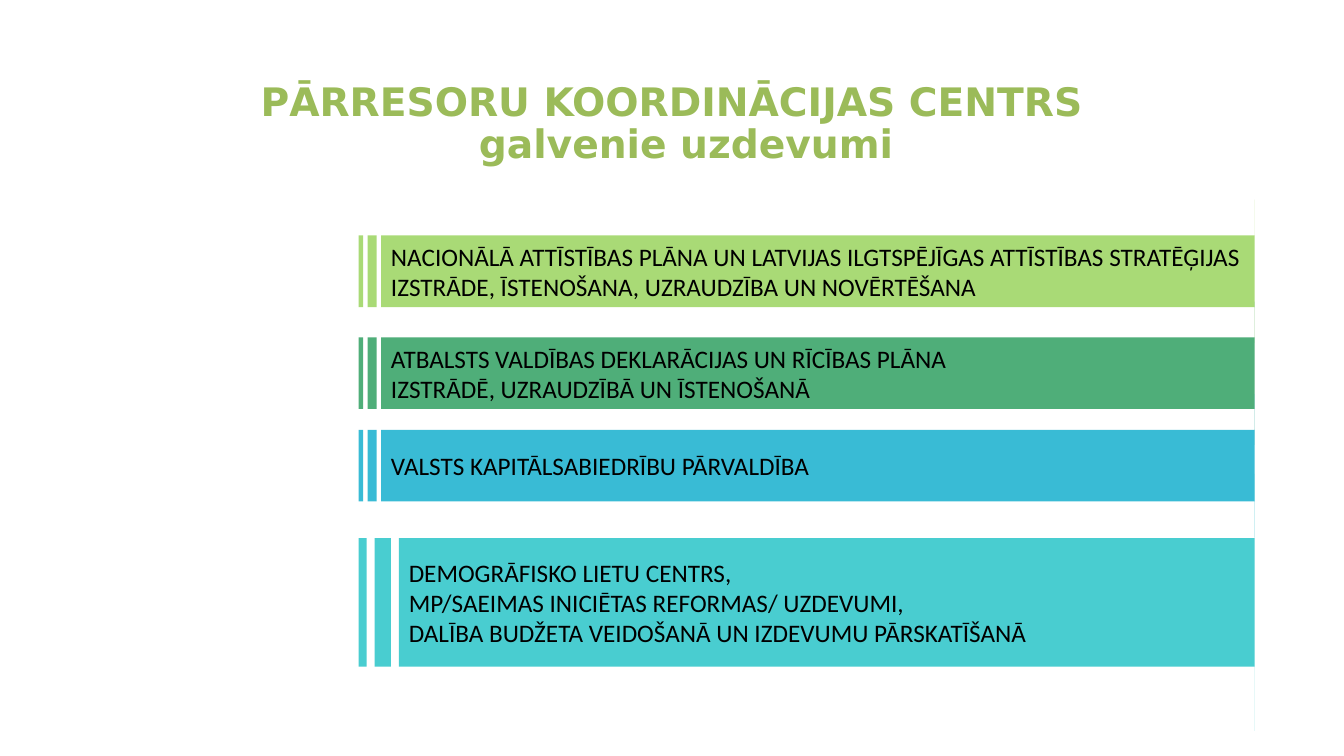
from dataclasses import dataclass

from lxml.etree import SubElement
from pptx import Presentation
from pptx.dml.color import RGBColor
from pptx.enum.shapes import MSO_SHAPE
from pptx.enum.text import MSO_ANCHOR, PP_ALIGN
from pptx.oxml.ns import qn
from pptx.util import Cm, Pt


@dataclass(frozen=True)
class Theme:
    title_font: str = "DejaVu Sans"
    body_font: str = "Calibri"
    title_size: int = 28
    body_size: int = 18
    title: str = "9BBB59"
    text: str = "000000"
    lime: str = "92D050"
    green: str = "008A3E"
    blue: str = "02A9CA"
    teal: str = "16C0C4"


class TaskSlide:
    def __init__(self, deck, theme):
        self.theme = theme
        self.page = deck.slides.add_slide(deck.slide_layouts[6])

    def add_span(self, para, text, font, size, color, bold=False):
        span = para.add_run()
        span.text = text
        span.font.name = font
        span.font.size = Pt(size)
        span.font.bold = bold
        span.font.color.rgb = RGBColor.from_string(color)

    def add_title(self, lines):
        """Add the heading; each line is a text with its left indent in cm."""
        theme = self.theme
        box = self.page.shapes.add_textbox(Cm(6.32), Cm(1.96), Cm(26), Cm(2.97))
        frame = box.text_frame
        frame.word_wrap = True
        for number, (text, indent) in enumerate(lines):
            para = frame.add_paragraph() if number else frame.paragraphs[0]
            para._p.get_or_add_pPr().set("marL", str(Cm(indent)))
            para.line_spacing = 0.9
            self.add_span(para, text, theme.title_font, theme.title_size,
                          theme.title, bold=True)

    def add_task(self, top, height, color, opacity, lines):
        """Add a striped bar; opacity is a percentage."""
        theme = self.theme
        arrow = self.page.shapes.add_shape(
            MSO_SHAPE.STRIPED_RIGHT_ARROW, Cm(9.04), Cm(top), Cm(22.58), Cm(height))
        arrow.adjustments[0] = 0.5
        arrow.adjustments[1] = 0
        arrow.shadow.inherit = False
        arrow.line.fill.background()
        arrow.fill.solid()
        arrow.fill.fore_color.rgb = RGBColor.from_string(color)
        shade = arrow._element.spPr.find(qn("a:solidFill"))[0]
        SubElement(shade, qn("a:alpha")).set("val", str(opacity * 1000))

        frame = arrow.text_frame
        frame.word_wrap = True
        frame.vertical_anchor = MSO_ANCHOR.MIDDLE
        for number, text in enumerate(lines):
            para = frame.add_paragraph() if number else frame.paragraphs[0]
            para.alignment = PP_ALIGN.LEFT
            self.add_span(para, text, theme.body_font, theme.body_size, theme.text)


def main():
    deck = Presentation()
    deck.slide_width, deck.slide_height = Cm(33.87), Cm(19.05)
    theme = Theme()
    slide = TaskSlide(deck, theme)

    slide.add_title([("PĀRRESORU KOORDINĀCIJAS CENTRS", 0),
                     ("galvenie uzdevumi", 5.5)])

    tasks = [
        (5.03, 3.61, theme.lime, 78,
         ["NACIONĀLĀ ATTĪSTĪBAS PLĀNA UN LATVIJAS ILGTSPĒJĪGAS ATTĪSTĪBAS STRATĒĢIJAS",
          "IZSTRĀDE, ĪSTENOŠANA, UZRAUDZĪBA UN NOVĒRTĒŠANA"]),
        (7.6, 3.61, theme.green, 69,
         ["ATBALSTS VALDĪBAS DEKLARĀCIJAS UN RĪCĪBAS PLĀNA",
          "IZSTRĀDĒ, UZRAUDZĪBĀ UN ĪSTENOŠANĀ"]),
        (9.93, 3.61, theme.blue, 78,
         ["VALSTS KAPITĀLSABIEDRĪBU PĀRVALDĪBA"]),
        (11.94, 6.48, theme.teal, 78,
         ["DEMOGRĀFISKO LIETU CENTRS,",
          "MP/SAEIMAS INICIĒTAS REFORMAS/ UZDEVUMI,",
          "DALĪBA BUDŽETA VEIDOŠANĀ UN IZDEVUMU PĀRSKATĪŠANĀ"]),
    ]
    for task in tasks:
        slide.add_task(*task)

    deck.save("out.pptx")


if __name__ == "__main__":
    main()
